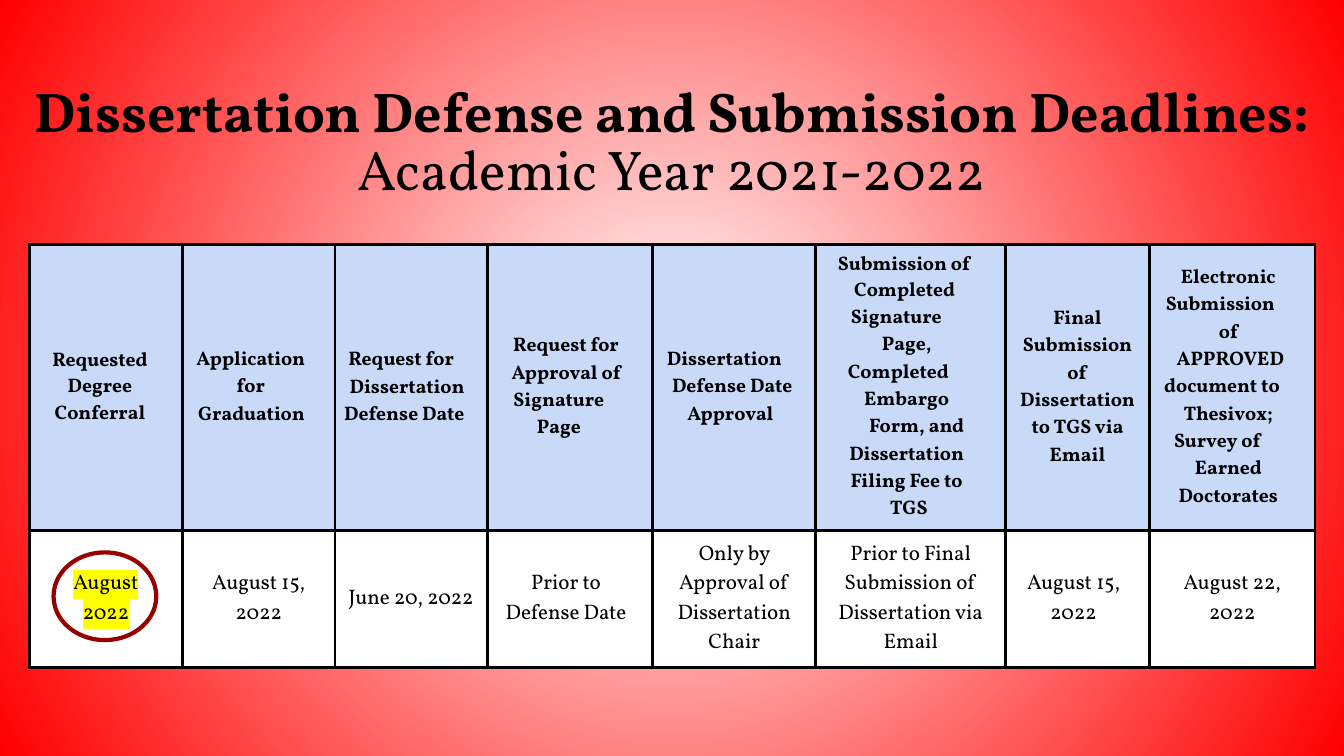
from dataclasses import dataclass

from lxml import etree
from pptx import Presentation
from pptx.dml.color import RGBColor as Rgb
from pptx.enum.shapes import MSO_SHAPE as Shape
from pptx.enum.text import MSO_ANCHOR as Anchor, PP_ALIGN as Align
from pptx.oxml import parse_xml
from pptx.oxml.ns import nsdecls, qn
from pptx.util import Cm, Pt

HUES = {"ink": "000000", "head": "C9DAF8", "body": "FFFFFF",
        "mark": "FFFF00", "ring": "980000", "edge": "FF0000"}
FACE = "Vollkorn"
WIDTHS = [3.86, 3.84, 3.84, 4.17, 4.11, 4.78, 3.63, 4.17]
HEIGHTS = [7.14, 3.45]
INSET = Cm(0.18)


@dataclass
class Line:
    text: str
    shift: float = 0  # sideways move of the centred text, in cm
    space: float = 1
    mark: bool = False


@dataclass
class Style:
    size: float
    bold: bool
    fill: str


HEAD = Style(14, True, "head")
BODY = Style(15, False, "body")

HEADS = [
    [Line("Requested Degree", -0.15, 0.96), Line("Conferral")],
    [Line("Application for", -0.2), Line("Graduation", -0.18)],
    [Line("Request for", -0.25), Line("Dissertation", -0.1),
     Line("Defense Date", -0.17, 0.96)],
    [Line("Request for", -0.1), Line("Approval of", -0.1),
     Line("Signature Page", -0.28)],
    [Line("Dissertation", -0.25), Line("Defense Date", -0.05),
     Line("Approval", -0.1)],
    [Line("Submission of Completed", -0.15, 0.96), Line("Signature", -0.36),
     Line("Page,", -0.1), Line("Completed", -0.31), Line("Embargo", -0.1),
     Line("Form, and", 0.25), Line("Dissertation", -0.1),
     Line("Filing Fee to", -0.1), Line("TGS", -0.05)],
    [Line("Final Submission of Dissertation to TGS via Email")],
    [Line("Electronic", -0.1), Line("Submission", -0.3), Line("of", -0.1),
     Line("APPROVED", -0.05), Line("document to", -0.26),
     Line("Thesivox;", -0.1), Line("Survey of", -0.38),
     Line("Earned", -0.1), Line("Doctorates", -0.1)],
]
DATES = [
    [Line("August", mark=True), Line("2022", mark=True)],
    [Line("August 15, 2022")],
    [Line("June 20, 2022")],
    [Line("Prior to", -0.1), Line("Defense Date")],
    [Line("Only by Approval of Dissertation Chair")],
    [Line("Prior to Final Submission of Dissertation via Email")],
    [Line("August 15,", -0.1), Line("2022")],
    [Line("August 22,"), Line("2022")],
]


def apply(thing, values: dict) -> None:
    for name, value in values.items():
        setattr(thing, name, value)


def write(frame, lines: list[Line], looks: list[Style]) -> None:
    """Fill a text frame with one centred paragraph per line."""
    for i, (line, look) in enumerate(zip(lines, looks)):
        para = frame.paragraphs[0] if i == 0 else frame.add_paragraph()
        apply(para, {"alignment": Align.CENTER, "line_spacing": line.space,
                     "space_before": Pt(0)})
        if line.shift:
            side = "marL" if line.shift > 0 else "marR"
            para._p.get_or_add_pPr().set(side, str(Cm(2 * abs(line.shift))))
        run = para.add_run()
        run.text = line.text
        apply(run.font, {"size": Pt(look.size), "bold": look.bold,
                         "name": FACE})
        run.font.color.rgb = Rgb.from_string(HUES["ink"])
        if line.mark:
            run.font._element.find(qn("a:latin")).addprevious(parse_xml(
                f'<a:highlight {nsdecls("a")}>'
                f'<a:srgbClr val="{HUES["mark"]}"/></a:highlight>'))


def border(cell) -> None:
    props = cell._tc.get_or_add_tcPr()
    for i, side in enumerate("LRTB"):
        props.insert(i, parse_xml(
            f'<a:ln{side} {nsdecls("a")} w="{Pt(2.25)}"><a:solidFill>'
            f'<a:srgbClr val="{HUES["ink"]}"/></a:solidFill></a:ln{side}>'))


def paint(slide) -> None:
    """Give the slide a round gradient, white in the middle."""
    fill = slide.background.fill
    fill.gradient()
    for stop, hue, place in zip(fill.gradient_stops, ("body", "edge"), (0, 1)):
        stop.color.rgb = Rgb.from_string(HUES[hue])
        stop.position = place
    grad = slide.element.find(".//" + qn("a:gradFill"))
    edge = grad.findall(".//" + qn("a:srgbClr"))[-1]
    etree.SubElement(edge, qn("a:alpha")).set("val", "53000")
    old = grad.find(qn("a:lin"))
    grad.replace(old, parse_xml(
        f'<a:path {nsdecls("a")} path="circle">'
        '<a:fillToRect l="50000" t="50000" r="50000" b="50000"/></a:path>'))


def add_title(slide) -> None:
    title = slide.shapes.title
    apply(title, {"left": Cm(0.48), "top": Cm(1.9),
                  "width": Cm(32.9), "height": Cm(3.45)})
    frame = title.text_frame
    apply(frame, {"margin_left": 0, "margin_right": 0, "margin_top": 0,
                  "margin_bottom": 0, "word_wrap": True,
                  "vertical_anchor": Anchor.MIDDLE})
    write(frame,
          [Line("Dissertation Defense and Submission Deadlines:", space=0.87),
           Line("Academic Year 2021-2022", space=0.87)],
          [Style(40, True, ""), Style(40, False, "")])


def add_grid(slide) -> None:
    table = slide.shapes.add_table(
        len(HEIGHTS), len(WIDTHS), Cm(0.74), Cm(6.17),
        Cm(sum(WIDTHS)), Cm(sum(HEIGHTS))).table
    apply(table, {"first_row": False, "horz_banding": False})
    for col, width in zip(table.columns, WIDTHS):
        col.width = Cm(width)
    for r, (texts, look) in enumerate(((HEADS, HEAD), (DATES, BODY))):
        table.rows[r].height = Cm(HEIGHTS[r])
        for c, lines in enumerate(texts):
            cell = table.cell(r, c)
            apply(cell, {"margin_left": INSET, "margin_right": INSET,
                         "margin_top": INSET, "margin_bottom": INSET,
                         "vertical_anchor": Anchor.MIDDLE})
            cell.fill.solid()
            cell.fill.fore_color.rgb = Rgb.from_string(HUES[look.fill])
            border(cell)
            write(cell.text_frame, lines, [look] * len(lines))


def add_ring(slide) -> None:
    ring = slide.shapes.add_shape(
        Shape.OVAL, Cm(1.35), Cm(13.92), Cm(2.59), Cm(2.21))
    ring.shadow.inherit = False
    ring.fill.background()
    ring.line.color.rgb = Rgb.from_string(HUES["ring"])
    ring.line.width = Pt(3)


def main() -> None:
    deck = Presentation()
    apply(deck, {"slide_width": Cm(33.87), "slide_height": Cm(19.05)})
    slide = deck.slides.add_slide(deck.slide_layouts.get_by_name("Title Only"))
    paint(slide)
    add_title(slide)
    add_grid(slide)
    add_ring(slide)
    deck.save("out.pptx")


if __name__ == "__main__":
    main()
